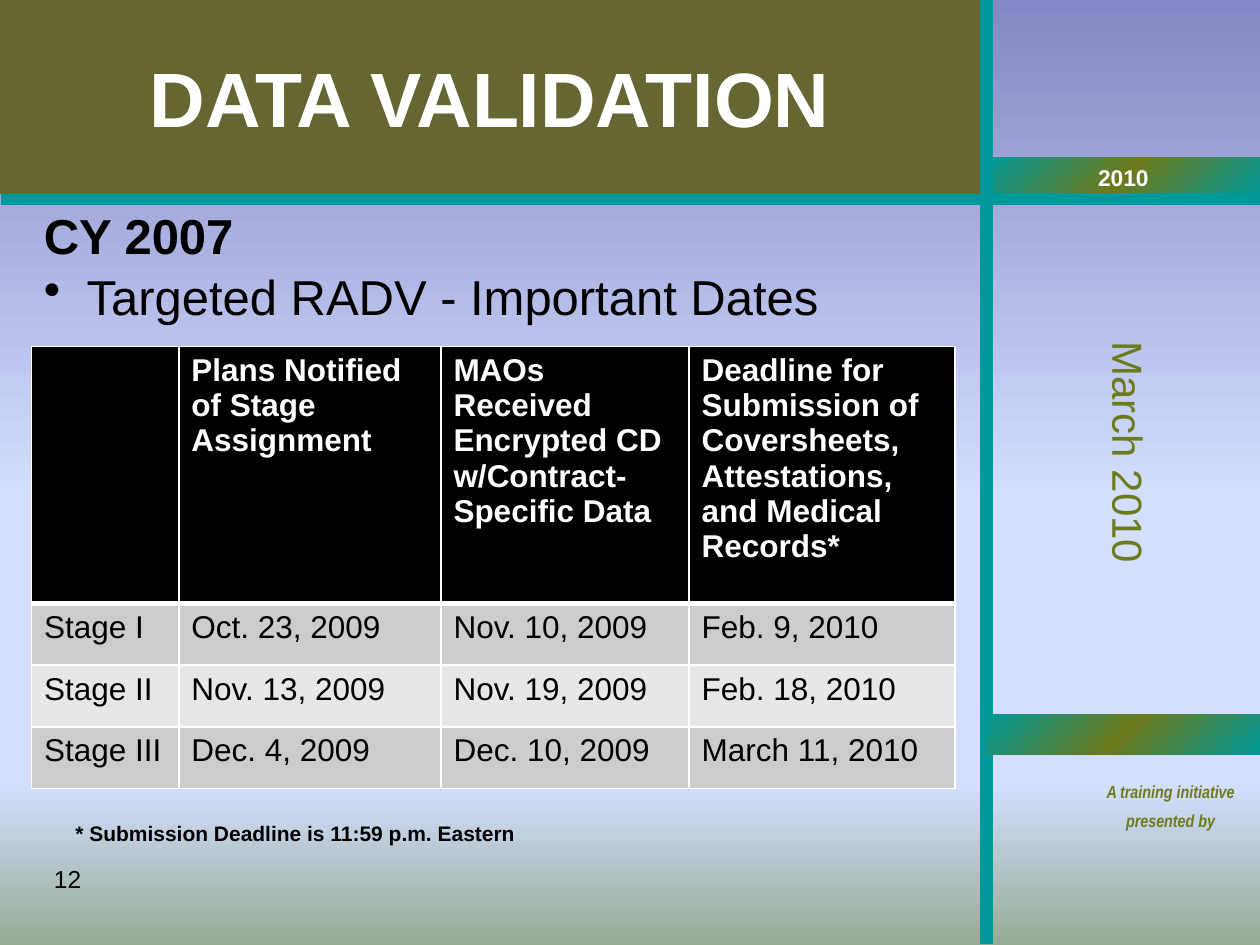
from lxml.etree import SubElement
from pptx import Presentation
from pptx.dml.color import RGBColor
from pptx.enum.shapes import MSO_CONNECTOR, MSO_SHAPE
from pptx.enum.text import MSO_ANCHOR, PP_ALIGN
from pptx.oxml.ns import qn
from pptx.util import Inches, Pt

WIDTH, HEIGHT = 10, 7.5
DIVIDER_X, DIVIDER_Y = 7.83, 1.58
SIDE_WIDTH = WIDTH - DIVIDER_X
TEAL, OLIVE, WHITE, BLACK = "009999", "6D7A1C", "FFFFFF", "000000"
BACKGROUND = [(0, "8488C4"), (53, "D4DEFF"), (83, "D4DEFF"), (100, "96AB94")]
BAND = [(0, TEAL), (50, OLIVE), (100, TEAL)]

TITLE = "DATA VALIDATION"
HEADING = "CY 2007"
BULLET = "Targeted RADV - Important Dates"
DATES = [
    ["", "Plans Notified of Stage Assignment",
     "MAOs Received Encrypted CD w/Contract-Specific Data",
     "Deadline for Submission of Coversheets, Attestations, and Medical Records*"],
    ["Stage I", "Oct. 23, 2009", "Nov. 10, 2009", "Feb. 9, 2010"],
    ["Stage II", "Nov. 13, 2009", "Nov. 19, 2009", "Feb. 18, 2010"],
    ["Stage III", "Dec. 4, 2009", "Dec. 10, 2009", "March 11, 2010"],
]
COLUMN_WIDTHS = [1.17, 2.08, 1.97, 2.11]
ROW_HEIGHTS = [2.04] + [0.49] * 3


def color(value):
    return RGBColor.from_string(value)


def box(*lengths):
    return [Inches(length) for length in lengths]


def set_gradient(fill, element, stops, angle):
    fill.gradient()
    gradient = element.find(".//" + qn("a:gradFill"))
    stop_list = gradient.find(qn("a:gsLst"))
    for stop in list(stop_list):
        stop_list.remove(stop)
    for position, value in stops:
        stop = SubElement(stop_list, qn("a:gs"), pos=str(position * 1000))
        SubElement(stop, qn("a:srgbClr"), val=value)
    gradient.find(qn("a:lin")).set("ang", str(angle * 60000))


def write(paragraph, text, size, value, bold=False, align=PP_ALIGN.LEFT, font="Arial"):
    paragraph.text = text
    paragraph.alignment = align
    paragraph.font.name = font
    paragraph.font.size = Pt(size)
    paragraph.font.bold = bold
    paragraph.font.color.rgb = color(value)
    return paragraph


def add_text(slide, place, *style, wrap=True, **options):
    shape = slide.shapes.add_textbox(*box(*place))
    shape.text_frame.word_wrap = wrap
    write(shape.text_frame.paragraphs[0], *style, **options)
    return shape


def add_rectangle(slide, *place):
    shape = slide.shapes.add_shape(MSO_SHAPE.RECTANGLE, *box(*place))
    shape.shadow.inherit = False
    shape.line.fill.background()
    shape.text_frame.vertical_anchor = MSO_ANCHOR.MIDDLE
    return shape


def add_band(slide, top):
    band = add_rectangle(slide, DIVIDER_X, top, SIDE_WIDTH, 0.32)
    set_gradient(band.fill, band._element.spPr, BAND, 45)
    return band


def add_divider(slide, *ends):
    line = slide.shapes.add_connector(MSO_CONNECTOR.STRAIGHT, *box(*ends))
    line.line.color.rgb = color(TEAL)
    line.line.width = Pt(7.25)
    SubElement(line._element.spPr, qn("a:effectLst"))


def set_borders(cell, bottom):
    properties = cell._tc.get_or_add_tcPr()
    for index, (side, width) in enumerate(
            [("lnL", 1), ("lnR", 1), ("lnT", 1), ("lnB", bottom)]):
        line = SubElement(properties, qn("a:" + side), w=str(Pt(width)))
        fill = SubElement(line, qn("a:solidFill"))
        SubElement(fill, qn("a:srgbClr"), val=WHITE)
        properties.insert(index, line)


def add_dates_table(slide):
    place = box(0.25, 2.75, sum(COLUMN_WIDTHS), sum(ROW_HEIGHTS))
    table = slide.shapes.add_table(len(DATES), len(DATES[0]), *place).table
    for column, width in zip(table.columns, COLUMN_WIDTHS):
        column.width = Inches(width)
    for index, (row, height, texts) in enumerate(zip(table.rows, ROW_HEIGHTS, DATES)):
        row.height = Inches(height)
        header = index == 0
        background = BLACK if header else ("E7E7E7", "CCCCCC")[index % 2]
        for cell, text in zip(row.cells, texts):
            cell.fill.solid()
            cell.fill.fore_color.rgb = color(background)
            set_borders(cell, 3 if header else 1)
            write(cell.text_frame.paragraphs[0], text, 18,
                  WHITE if header else BLACK, bold=header)


def main():
    presentation = Presentation()
    presentation.slide_width, presentation.slide_height = box(WIDTH, HEIGHT)
    slide = presentation.slides.add_slide(presentation.slide_layouts[6])
    set_gradient(slide.background.fill, slide._element, BACKGROUND, 90)

    # Side panel and dividers
    add_text(slide, (8.58, 6.08, 1.42, 0.57), "A training initiative presented by",
             10, OLIVE, True, PP_ALIGN.CENTER, "Arial Narrow")
    credit = slide.shapes[-1].text_frame.paragraphs[0]
    credit.font.italic = True
    credit.line_spacing = 1.4
    year = add_band(slide, 1.25)
    write(year.text_frame.paragraphs[0], "2010", 13, WHITE, True, PP_ALIGN.CENTER)
    add_divider(slide, WIDTH, DIVIDER_Y, 0.01, DIVIDER_Y)
    add_divider(slide, DIVIDER_X, 0, DIVIDER_X, HEIGHT - 0.01)
    month = add_text(slide, (7.85, 3.4, 2.34, 0.38), "March 2010", 24, OLIVE,
                     align=PP_ALIGN.CENTER, wrap=False)
    month.rotation = 90
    add_band(slide, 5.67)

    # Title
    title = add_rectangle(slide, 0, 0, 7.78, 1.54)
    title.fill.solid()
    title.fill.fore_color.rgb = color("666633")
    write(title.text_frame.paragraphs[0], TITLE, 44, WHITE, True, PP_ALIGN.CENTER)

    # Heading and bullet
    body = add_text(slide, (0.25, DIVIDER_Y, 7.33, 1.04), HEADING, 28, BLACK, True)
    bullet = body.text_frame.add_paragraph()
    properties = bullet._p.get_or_add_pPr()
    properties.set("marL", str(Inches(0.34)))
    properties.set("indent", str(-Inches(0.34)))
    SubElement(properties, qn("a:buChar"), char="•")
    write(bullet, BULLET, 28, BLACK)
    bullet.space_before = Pt(1.5)

    # Table, footnote and page number
    add_dates_table(slide)
    footnote = add_text(slide, (0.5, 6.5, 7.25, 0.33),
                        "* Submission Deadline is 11:59 p.m. Eastern", 12, BLACK, True)
    footnote.text_frame.paragraphs[0].line_spacing = 0.8
    add_text(slide, (0.33, 6.81, 2.33, 0.52), "12", 14, BLACK)

    presentation.save("out.pptx")


if __name__ == "__main__":
    main()
